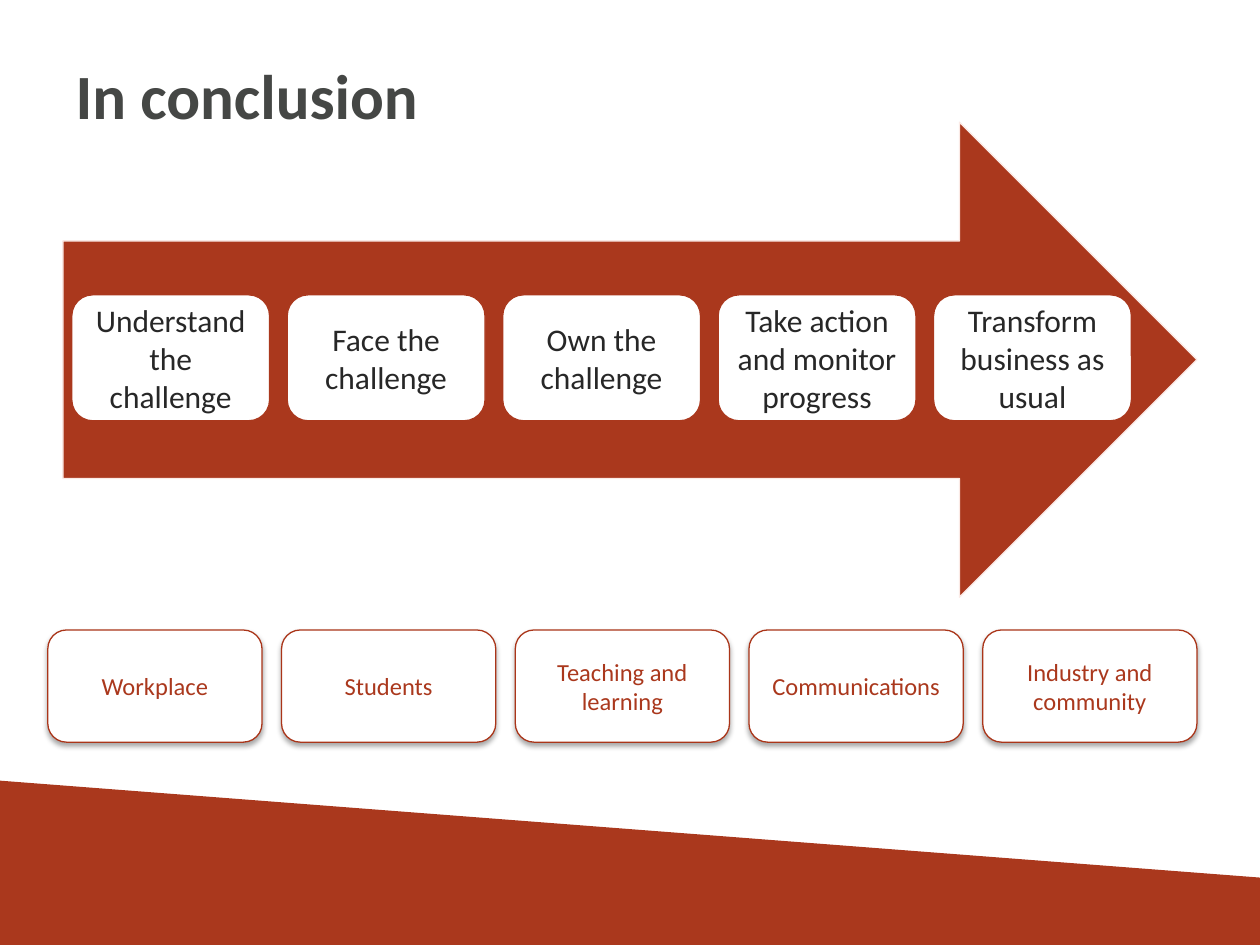
"""Build the conclusion slide: five steps on an arrow above five themes."""
from lxml import etree
from pptx import Presentation
from pptx.dml.color import RGBColor
from pptx.enum import shapes, text
from pptx.oxml import ns
from pptx.util import Inches, Pt

TITLE = "In conclusion"
STEPS = ["Understand the challenge", "Face the challenge", "Own the challenge",
         "Take action and monitor progress", "Transform business as usual"]
THEMES = ["Workplace", "Students", "Teaching and learning",
          "Communications", "Industry and community"]
RED, WHITE, DARK = "AA381D", "FFFFFF", "272727"
KIND = shapes.MSO_SHAPE


def paint(part, color):
    part.solid()
    part.fore_color.rgb = RGBColor.from_string(color)


def style(frame, size, color, bold=False):
    for run in frame.paragraphs[0].runs:
        run.font.name, run.font.size, run.font.bold = "Calibri", Pt(size), bold
        paint(run.font.fill, color)


def place(shape, box):
    shape.left, shape.top, shape.width, shape.height = map(Inches, box)


def draw(slide, kind, box, fill, line=None):
    shape = slide.shapes.add_shape(kind, *map(Inches, box))
    shape.shadow.inherit = False
    paint(shape.fill, fill)
    if line:
        paint(shape.line.fill, line)
        shape.line.width = Pt(0.75)
    else:
        shape.line.fill.background()
    return shape


def lift(shape):
    effects = shape._element.spPr.find(ns.qn("a:effectLst"))
    shadow = etree.SubElement(effects, ns.qn("a:outerShdw"), blurRad=str(Pt(3.1)),
                              dist=str(Pt(1.8)), dir="5400000", rotWithShape="0")
    tint = etree.SubElement(shadow, ns.qn("a:srgbClr"), val="000000")
    etree.SubElement(tint, ns.qn("a:alpha"), val="35000")


def row(slide, labels, start, pitch, line, size, color, raised=False):
    left, top, width, height = start
    for i, label in enumerate(labels):
        box = (left + i * pitch, top, width, height)
        card = draw(slide, KIND.ROUNDED_RECTANGLE, box, WHITE, line)
        frame = card.text_frame
        frame.text = label
        frame.word_wrap = True
        frame.margin_left = frame.margin_right = Inches(0.08)
        frame.vertical_anchor = text.MSO_ANCHOR.MIDDLE
        frame.paragraphs[0].alignment = text.PP_ALIGN.CENTER
        style(frame, size, color)
        if raised:
            lift(card)


def main():
    deck = Presentation()
    deck.slide_width, deck.slide_height = Inches(10), Inches(7.5)
    slide = deck.slides.add_slide(deck.slide_layouts[5])

    band = draw(slide, KIND.RECTANGLE, (-0.27, 6.58, 10.47, 1.33), RED)
    band.rotation = 4.4

    title = slide.shapes.title
    place(title, (0.5, 0.3, 9, 0.89))
    frame = title.text_frame
    frame.text = TITLE
    frame.vertical_anchor = text.MSO_ANCHOR.MIDDLE
    frame.paragraphs[0].alignment = text.PP_ALIGN.LEFT
    style(frame, 36, "454745", True)

    draw(slide, KIND.RIGHT_ARROW, (0.5, 0.97, 9, 3.77), RED, "FBEAE6")
    row(slide, STEPS, (0.57, 2.34, 1.57, 1), 1.71, RED, 18, DARK)
    row(slide, THEMES, (0.38, 5, 1.7, 0.89), 1.855, "AA3519", 14, RED, True)
    deck.save("out.pptx")


if __name__ == "__main__":
    main()
